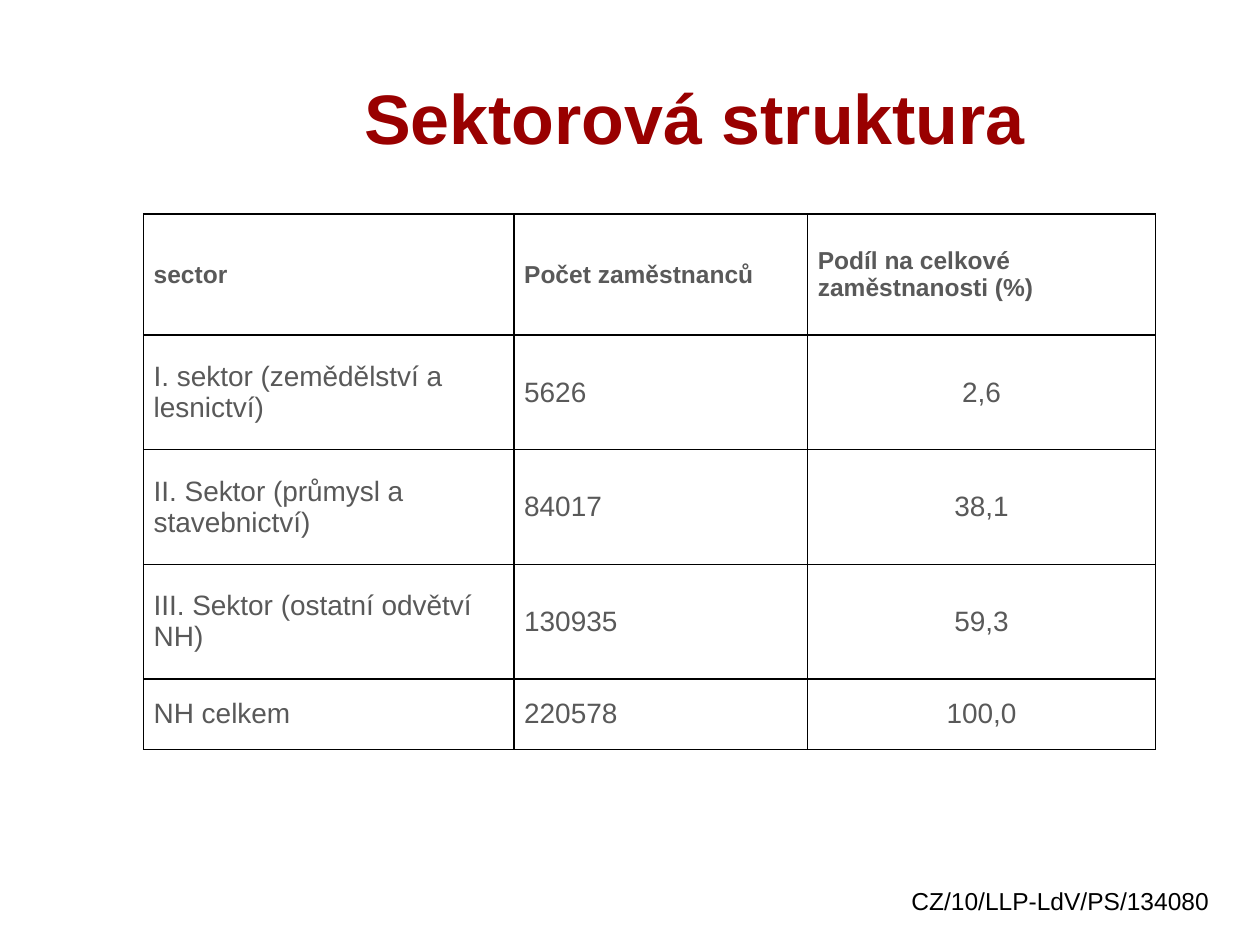
import pptx
import pptx.dml.color
import pptx.enum.text
import pptx.oxml
import pptx.oxml.ns
import pptx.util
from dataclasses import dataclass

Pt = pptx.util.Pt
ALIGN = pptx.enum.text.PP_ALIGN
ANCHOR = pptx.enum.text.MSO_ANCHOR

HEADING = "Sektorová struktura"
PROJECT_CODE = "CZ/10/LLP-LdV/PS/134080"
SECTORS = [
    ("sector", "Počet zaměstnanců", "Podíl na celkové zaměstnanosti (%)"),
    ("I. sektor (zemědělství a lesnictví)", "5626", "2,6"),
    ("II. Sektor (průmysl a stavebnictví)", "84017", "38,1"),
    ("III. Sektor (ostatní odvětví NH)", "130935", "59,3"),
    ("NH celkem", "220578", "100,0"),
]

SLIDE_SIZE = (720, 540)
HEADING_BOX = (200.9, 21.6, 483.1, 90)
CODE_BOX = (491.8, 502.6, 228.2, 37.4)
TABLE_CORNER = (82.1, 122.4)
COLUMN_WIDTHS = (211.7, 167.8, 198.7)
ROW_HEIGHTS = (69.1, 65.5, 65.5, 65.5, 40.3)
SHARE_COLUMN = 2


@dataclass(frozen=True)
class Theme:
    font: str = "Arial"
    heading: str = "990000"
    cell_text: str = "595959"
    dark: str = "000000"
    paper: str = "FFFFFF"
    heading_size: int = 40
    small_size: int = 14
    body_size: int = 16
    border: int = 1
    inset_x: float = 5.76
    inset_y: float = 2.88


THEME = Theme()


def rgb(value):
    return pptx.dml.color.RGBColor.from_string(value)


def write(frame, text, size, color, bold=False, align=ALIGN.LEFT):
    frame.word_wrap = True
    paragraph = frame.paragraphs[0]
    paragraph.alignment = align
    run = paragraph.add_run()
    run.text = text
    run.font.name = THEME.font
    run.font.size = Pt(size)
    run.font.bold = bold
    run.font.color.rgb = rgb(color)


def add_borders(cell):
    properties = cell._tc.get_or_add_tcPr()
    for side in ("lnL", "lnR", "lnT", "lnB"):
        properties.append(pptx.oxml.parse_xml(
            f'<a:{side} {pptx.oxml.ns.nsdecls("a")} w="{Pt(THEME.border)}">'
            f'<a:solidFill><a:srgbClr val="{THEME.dark}"/></a:solidFill></a:{side}>'))


def add_heading(slide):
    heading = slide.shapes.title
    heading.left, heading.top, heading.width, heading.height = map(Pt, HEADING_BOX)
    frame = heading.text_frame
    frame.auto_size = pptx.enum.text.MSO_AUTO_SIZE.NONE
    frame.vertical_anchor = ANCHOR.MIDDLE
    write(frame, HEADING, THEME.heading_size, THEME.heading, bold=True)


def add_project_code(slide):
    code = slide.shapes.add_textbox(*map(Pt, CODE_BOX))
    write(code.text_frame, PROJECT_CODE, THEME.small_size, THEME.dark, align=ALIGN.CENTER)


def add_sector_table(slide):
    extent = (sum(COLUMN_WIDTHS), sum(ROW_HEIGHTS))
    table = slide.shapes.add_table(
        len(SECTORS), len(COLUMN_WIDTHS), *map(Pt, TABLE_CORNER + extent)).table
    for column, width in zip(table.columns, COLUMN_WIDTHS):
        column.width = Pt(width)
    for row, height in zip(table.rows, ROW_HEIGHTS):
        row.height = Pt(height)

    for r, record in enumerate(SECTORS):
        is_header = r == 0
        size = THEME.small_size if is_header else THEME.body_size
        for c, text in enumerate(record):
            cell = table.cell(r, c)
            cell.margin_left = cell.margin_right = Pt(THEME.inset_x)
            cell.margin_top = cell.margin_bottom = Pt(THEME.inset_y)
            cell.vertical_anchor = ANCHOR.MIDDLE
            add_borders(cell)
            cell.fill.solid()
            cell.fill.fore_color.rgb = rgb(THEME.paper)
            centred = c == SHARE_COLUMN and not is_header
            write(cell.text_frame, text, size, THEME.cell_text, bold=is_header,
                  align=ALIGN.CENTER if centred else ALIGN.LEFT)


def main():
    deck = pptx.Presentation()
    deck.slide_width, deck.slide_height = map(Pt, SLIDE_SIZE)
    slide = deck.slides.add_slide(deck.slide_layouts.get_by_name("Title Only"))
    add_heading(slide)
    add_project_code(slide)
    add_sector_table(slide)
    deck.save("out.pptx")


if __name__ == "__main__":
    main()
